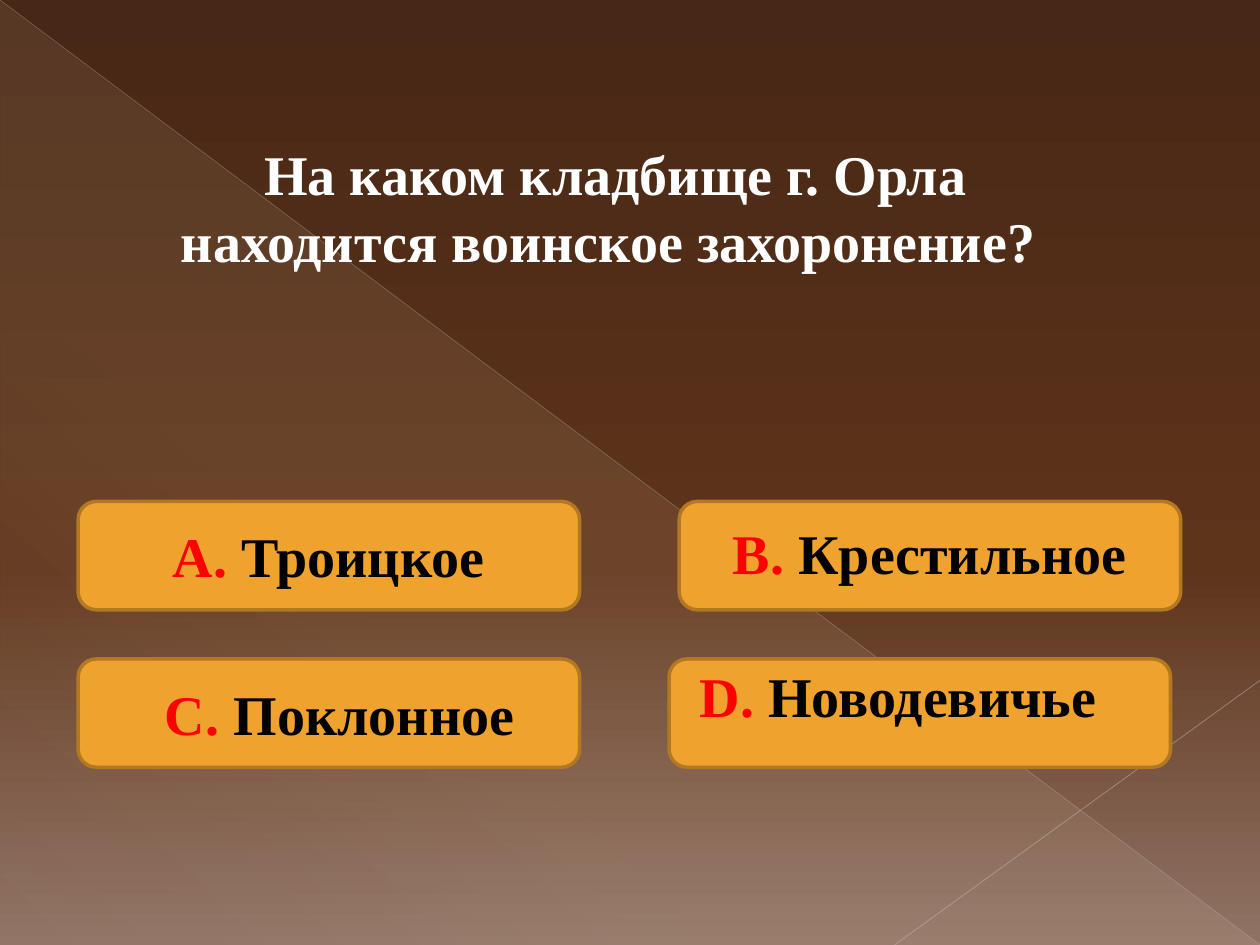
from dataclasses import dataclass

from lxml.etree import SubElement
from pptx import Presentation
from pptx.dml.color import RGBColor
from pptx.enum.shapes import MSO_CONNECTOR, MSO_SHAPE
from pptx.enum.text import MSO_ANCHOR as Anchor, PP_ALIGN as Align
from pptx.oxml.ns import qn
from pptx.util import Inches, Pt

WIDTH, HEIGHT = 10, 7.5
FONT, TEXT_SIZE = "Times New Roman", 32

WHITE = RGBColor(0xFF, 0xFF, 0xFF)
BLACK = RGBColor(0, 0, 0)
RED = RGBColor(0xFF, 0, 0)
AMBER = RGBColor(0xF0, 0xA2, 0x2E)
BRONZE = RGBColor(0xB2, 0x78, 0x22)
CREAM = RGBColor(0xFB, 0xEE, 0xC9)
PALE_GREY = RGBColor(0xBC, 0xB7, 0xB4)
LIGHT_GREY = RGBColor(0xC4, 0xBF, 0xBD)
DARK_BROWN = RGBColor(0x47, 0x27, 0x15)
BROWN = RGBColor(0x5E, 0x34, 0x1B)
ROSE_BROWN = RGBColor(0x90, 0x73, 0x65)

# Answer grid, in inches
COLUMNS = (0.62, 5.39)
ROWS = (3.98, 5.23)
ANSWER_WIDTH, ANSWER_HEIGHT = 3.98, 0.86


@dataclass(frozen=True)
class Stop:
    position: int
    color: RGBColor
    opacity: int = 100


@dataclass(frozen=True)
class Answer:
    letter: str
    text: str
    column: int
    row: int
    shift: float = 0       # offset of the box from its column
    pad_left: float = 0    # extra margins that nudge the text
    pad_right: float = 0
    pad_bottom: float = 0


@dataclass(frozen=True)
class Ray:
    start: tuple[float, float]  # shares of the slide's size
    end: tuple[float, float]
    color: RGBColor
    width: float
    opacity: int


ANSWERS = (
    Answer("А. ", "Троицкое", 0, 0),
    Answer("С. ", "Поклонное", 0, 1, pad_left=0.17),
    Answer("В. ", "Крестильное", 1, 0, pad_bottom=0.06),
    Answer("D. ", "Новодевичье", 1, 1, shift=-0.08, pad_right=0.34, pad_bottom=0.29),
)
RAYS = (
    Ray((0, 0), (1, 1), PALE_GREY, 0.39, 35),
    Ray((1, 0.72), (0.71, 1), LIGHT_GREY, 0.47, 45),
)


def set_opacity(color_element, percent: int) -> None:
    SubElement(color_element, qn("a:alpha"), val=str(percent * 1000))


def set_gradient(fill, parent, stops: tuple[Stop, ...], angle: int) -> None:
    fill.gradient()
    gradient = parent.find(".//" + qn("a:gradFill"))
    gradient.clear()
    stop_list = SubElement(gradient, qn("a:gsLst"))
    for stop in stops:
        item = SubElement(stop_list, qn("a:gs"), pos=str(stop.position * 1000))
        color = SubElement(item, qn("a:srgbClr"), val=str(stop.color))
        set_opacity(color, stop.opacity)
    SubElement(gradient, qn("a:lin"), ang=str(angle * 60000), scaled="0")


def add_span(para, text: str, color: RGBColor) -> None:
    span = para.add_run()
    span.text = text
    span.font.name, span.font.size = FONT, Pt(TEXT_SIZE)
    span.font.bold = True
    span.font.color.rgb = color


def draw_ray(page, ray: Ray) -> None:
    (x1, y1), (x2, y2) = ray.start, ray.end
    line = page.shapes.add_connector(
        MSO_CONNECTOR.STRAIGHT, Inches(x1 * WIDTH), Inches(y1 * HEIGHT),
        Inches(x2 * WIDTH), Inches(y2 * HEIGHT))
    line.line.color.rgb = ray.color
    line.line.width = Pt(ray.width)
    properties = line._element.spPr
    set_opacity(properties.find(".//" + qn("a:srgbClr")), ray.opacity)
    SubElement(properties, qn("a:effectLst"))


def draw_backdrop(page) -> None:
    set_gradient(page.background.fill, page._element,
                 (Stop(0, DARK_BROWN), Stop(60, BROWN), Stop(100, ROSE_BROWN)), 90)
    triangle = page.shapes.add_shape(
        MSO_SHAPE.RIGHT_TRIANGLE, 0, 0, Inches(WIDTH), Inches(HEIGHT))
    triangle.shadow.inherit = False
    triangle.line.fill.background()
    set_gradient(triangle.fill, triangle._element,
                 (Stop(0, CREAM, 10), Stop(70, CREAM, 8), Stop(100, CREAM, 1)), 133)
    for ray in RAYS:
        draw_ray(page, ray)


def draw_answer(page, answer: Answer) -> None:
    box = page.shapes.add_shape(
        MSO_SHAPE.FLOWCHART_ALTERNATE_PROCESS,
        Inches(COLUMNS[answer.column] + answer.shift), Inches(ROWS[answer.row]),
        Inches(ANSWER_WIDTH), Inches(ANSWER_HEIGHT))
    box.shadow.inherit = False
    box.fill.solid()
    box.fill.fore_color.rgb = AMBER
    box.line.color.rgb = BRONZE
    box.line.width = Pt(2)
    frame = box.text_frame
    frame.word_wrap = True
    frame.vertical_anchor = Anchor.MIDDLE
    frame.margin_left = Inches(0.1 + answer.pad_left)
    frame.margin_right = Inches(0.1 + answer.pad_right)
    frame.margin_bottom = Inches(0.05 + answer.pad_bottom)
    para = frame.paragraphs[0]
    para.alignment = Align.CENTER
    add_span(para, answer.letter, RED)
    add_span(para, answer.text, BLACK)


def place_question(page, text: str) -> None:
    title = page.shapes.title
    title.left, title.top = Inches(1.02), Inches(1.05)
    title.width, title.height = Inches(7.73), Inches(1.18)
    frame = title.text_frame
    frame.word_wrap = True
    frame.vertical_anchor = Anchor.MIDDLE
    para = frame.paragraphs[0]
    para.alignment = Align.CENTER
    add_span(para, text, WHITE)
    # Bring the title in front of the backdrop
    page.shapes._spTree.append(title._element)


def main() -> None:
    deck = Presentation()
    deck.slide_width, deck.slide_height = Inches(WIDTH), Inches(HEIGHT)
    page = deck.slides.add_slide(deck.slide_layouts[5])
    draw_backdrop(page)
    for answer in ANSWERS:
        draw_answer(page, answer)
    place_question(page, "На каком кладбище г. Орла находится воинское захоронение? ")
    deck.save("out.pptx")


if __name__ == "__main__":
    main()
